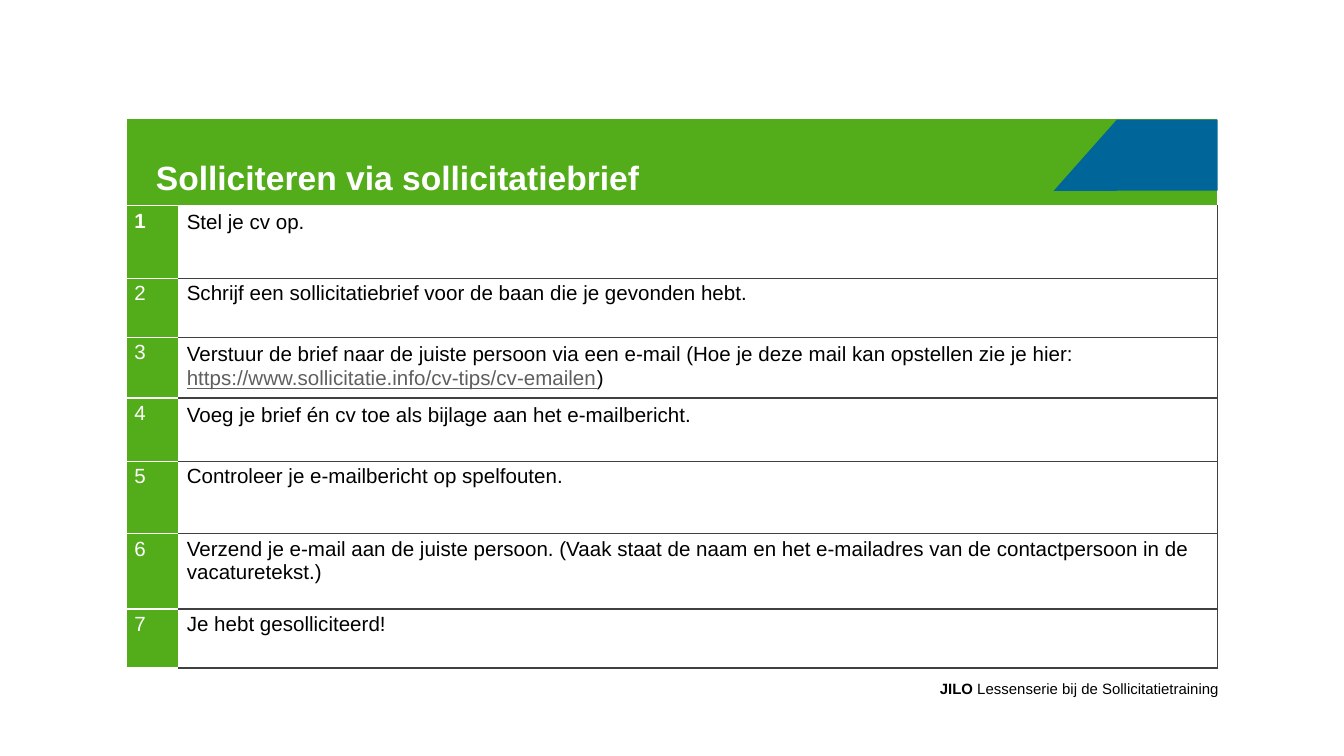
from lxml.etree import SubElement
from pptx import Presentation
from pptx.dml.color import RGBColor as RGB
from pptx.enum.shapes import MSO_SHAPE as SHAPE
from pptx.enum.text import MSO_ANCHOR as ANCHOR, PP_ALIGN as ALIGN
from pptx.oxml import parse_xml
from pptx.oxml.ns import nsdecls, qn
from pptx.util import Inches, Pt

COLORS = {"green": "53AC19", "blue": "006699", "white": "FFFFFF",
          "black": "000000", "line": "404040", "link": "5F5F5F"}
TITLE = "Solliciteren via sollicitatiebrief"
URL = "https://www.sollicitatie.info/cv-tips/cv-emailen"
STEPS = [
    (0.54, 1.07, ["Stel je cv op."]),
    (0.44, 1, ["Schrijf een sollicitatiebrief voor de baan die je gevonden hebt."]),
    (0.45, 1.07, ["Verstuur de brief naar de juiste persoon via een e-mail "
                  "(Hoe je deze mail kan opstellen zie je hier: ", URL, ")"]),
    (0.47, 1.07, ["Voeg je brief én cv toe als bijlage aan het e-mailbericht."]),
    (0.54, 1, ["Controleer je e-mailbericht op spelfouten."]),
    (0.56, 1, ["Verzend je e-mail aan de juiste persoon. (Vaak staat de naam en "
               "het e-mailadres van de contactpersoon in de vacaturetekst.)"]),
    (0.44, 1, ["Je hebt gesolliciteerd!"]),
]
FOOTER = [("JILO", True), (" Lessenserie bij de Sollicitatietraining", False)]
LEFT, TOP, HEADER_H = 0.94, 0.88, 0.65
COLS = [0.39, 7.73]
ACCENTS = [(SHAPE.RIGHT_TRIANGLE, (7.81, 0.92, 0.53, 0.47), 270),
           (SHAPE.RECTANGLE, (8.31, 0.89, 0.75, 0.53), 0)]


def add_run(p, text, color, size=11, bold=False, underline=False):
    r = p.add_run()
    r.text = text
    fmt = {"name": "Arial", "size": Pt(size), "bold": bold, "underline": underline}
    for key, value in fmt.items():
        setattr(r.font, key, value)
    r.font.color.rgb = RGB.from_string(COLORS[color])


def style_cell(cell, fill, borders):
    fmt = {"margin_left": 0.06, "margin_right": 0.06,
           "margin_top": 0.03, "margin_bottom": 0.03}
    for key, value in fmt.items():
        setattr(cell, key, Inches(value))
    cell.fill.solid()
    cell.fill.fore_color.rgb = RGB.from_string(COLORS[fill])
    tcPr = cell._tc.get_or_add_tcPr()
    for i, (side, color) in enumerate(zip("LRTB", borders)):
        ln = parse_xml(f'<a:ln{side} {nsdecls("a")} w="{Pt(0.75)}"/>')
        solid = SubElement(ln, qn("a:solidFill"))
        SubElement(solid, qn("a:srgbClr"), val=COLORS[color])
        tcPr.insert(i, ln)


def add_steps(slide):
    heights = [HEADER_H] + [h for h, _, _ in STEPS]
    box = map(Inches, (LEFT, TOP, sum(COLS), sum(heights)))
    table = slide.shapes.add_table(len(heights), len(COLS), *box).table
    for col, width in zip(table.columns, COLS):
        col.width = Inches(width)
    for row, height in zip(table.rows, heights):
        row.height = Inches(height)

    white = ["white"] * 4
    for cell in table.rows[0].cells:
        style_cell(cell, "green", white)
    title = table.cell(0, 0)
    title.merge(table.cell(0, 1))
    title.vertical_anchor = ANCHOR.BOTTOM
    title.margin_left, title.margin_bottom = Inches(0.22), Inches(0.06)
    add_run(title.text_frame.paragraphs[0], TITLE, "white", 18, True)

    for n, (_, spacing, parts) in enumerate(STEPS, 1):
        number, step = table.rows[n].cells
        style_cell(number, "green", white)
        add_run(number.text_frame.paragraphs[0], str(n), "white", bold=n == 1)
        top = "white" if n == 1 else "line"
        style_cell(step, "white", ["white", "line", top, "line"])
        p = step.text_frame.paragraphs[0]
        p.line_spacing = spacing
        for part in parts:
            link = part == URL
            add_run(p, part, "link" if link else "black", underline=link)


def add_accents(slide):
    for kind, box, rotation in ACCENTS:
        sp = slide.shapes.add_shape(kind, *map(Inches, box))
        sp.rotation = rotation
        sp.shadow.inherit = False
        sp.fill.solid()
        sp.fill.fore_color.rgb = RGB.from_string(COLORS["blue"])
        sp.line.fill.background()


def add_footer(slide):
    tf = slide.shapes.add_textbox(*map(Inches, (6.37, 5.01, 2.8, 0.24))).text_frame
    tf.word_wrap = True
    p = tf.paragraphs[0]
    p.alignment = ALIGN.RIGHT
    for text, bold in FOOTER:
        add_run(p, text, "black", 8, bold)


def main():
    prs = Presentation()
    prs.slide_width = Inches(10)
    prs.slide_height = prs.slide_width * 9 // 16
    s = prs.slides.add_slide(prs.slide_layouts[6])
    add_footer(s)
    add_steps(s)
    add_accents(s)
    prs.save("out.pptx")


if __name__ == "__main__":
    main()
